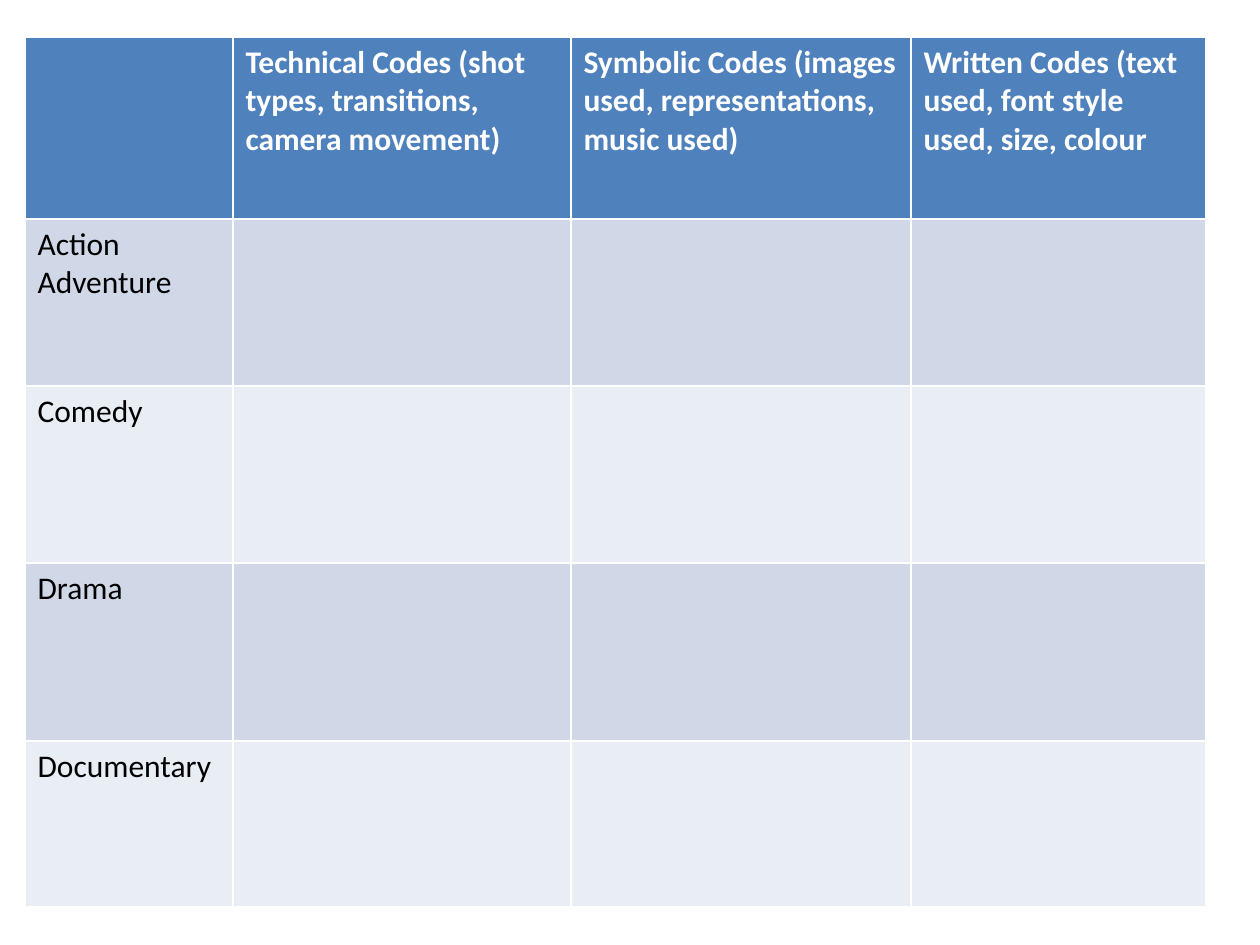
from pptx import Presentation
from pptx.dml.color import RGBColor
from pptx.util import Emu, Pt

PX_PER_INCH = 126
COLORS = {
    "header": "4F81BD",
    "band_dark": "D0D8E8",
    "band_light": "E9EDF4",
    "header_text": "FFFFFF",
    "body_text": "000000",
}
HEADERS = [
    "",
    "Technical Codes (shot types, transitions, camera movement)",
    "Symbolic Codes (images used, representations, music used)",
    "Written Codes (text used, font style used, size, colour",
]
GENRES = ["Action Adventure", "Comedy", "Drama", "Documentary"]
COL_WIDTHS = [208, 338, 340, 295]
ROW_HEIGHTS = [182, 167, 177, 178, 166]


def px(n):
    return Emu(round(n * 914400 / PX_PER_INCH))


def rgb(name):
    return RGBColor.from_string(COLORS[name])


def format_cell(cell, text, fill, color, bold):
    cell.fill.solid()
    cell.fill.fore_color.rgb = rgb(fill)
    cell.text = text
    font = cell.text_frame.paragraphs[0].font
    font.name = "Calibri"
    font.size = Pt(18)
    font.bold = bold
    font.color.rgb = rgb(color)


def add_codes_table(slide, left, top):
    rows = [HEADERS] + [[genre, "", "", ""] for genre in GENRES]
    # The default table style supplies the white cell borders
    table = slide.shapes.add_table(
        len(rows), len(HEADERS), px(left), px(top),
        px(sum(COL_WIDTHS)), px(sum(ROW_HEIGHTS))).table
    for column, width in zip(table.columns, COL_WIDTHS):
        column.width = px(width)
    for row, height in zip(table.rows, ROW_HEIGHTS):
        row.height = px(height)

    # Header row, then alternating bands
    for i, texts in enumerate(rows):
        is_header = i == 0
        band = "band_dark" if i % 2 else "band_light"
        fill = "header" if is_header else band
        color = "header_text" if is_header else "body_text"
        for j, text in enumerate(texts):
            format_cell(table.cell(i, j), text, fill, color, is_header)


def main():
    prs = Presentation()
    prs.slide_width, prs.slide_height = px(1260), px(945)
    slide = prs.slides.add_slide(prs.slide_layouts[6])
    add_codes_table(slide, 25, 37)
    prs.save("out.pptx")


if __name__ == "__main__":
    main()
